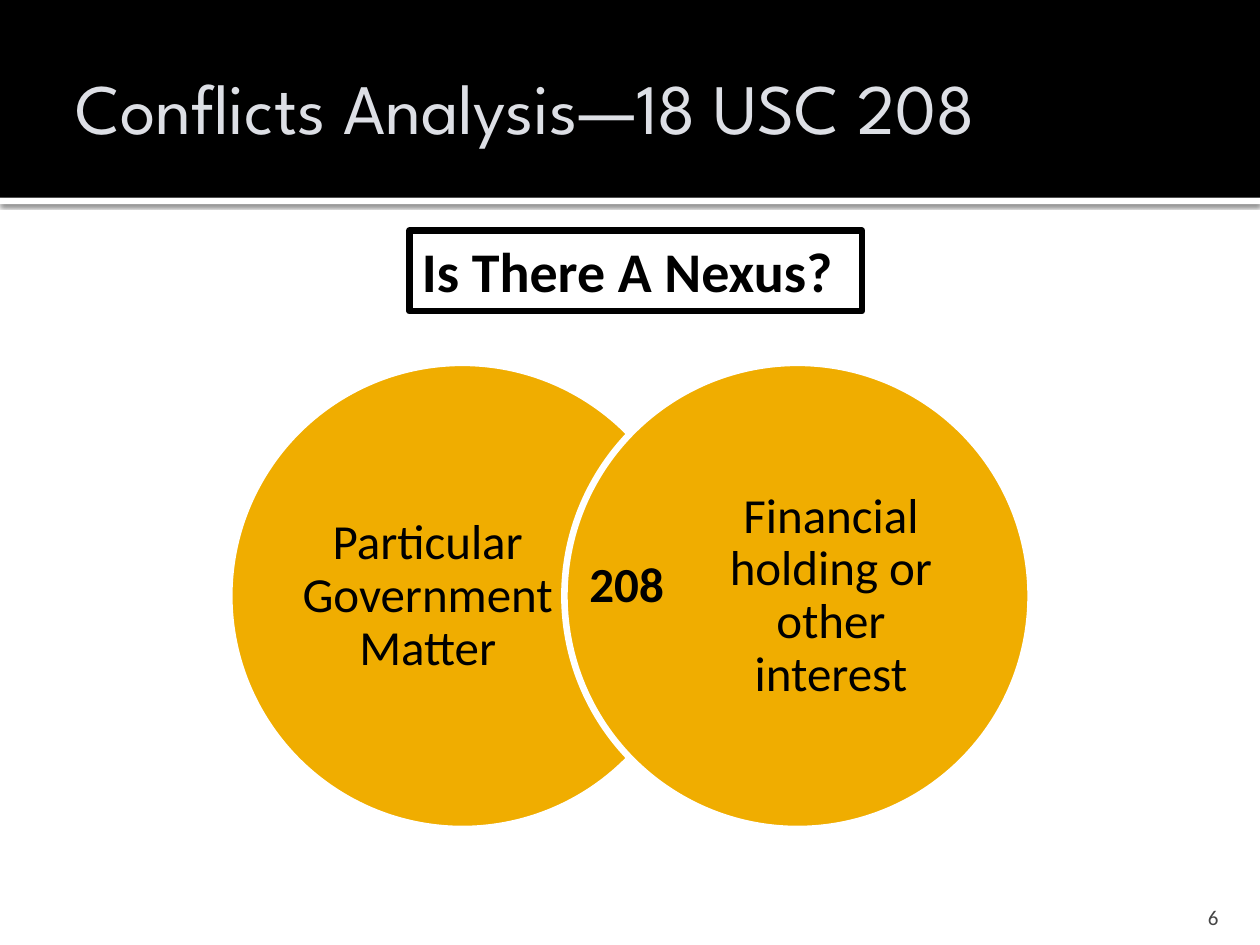
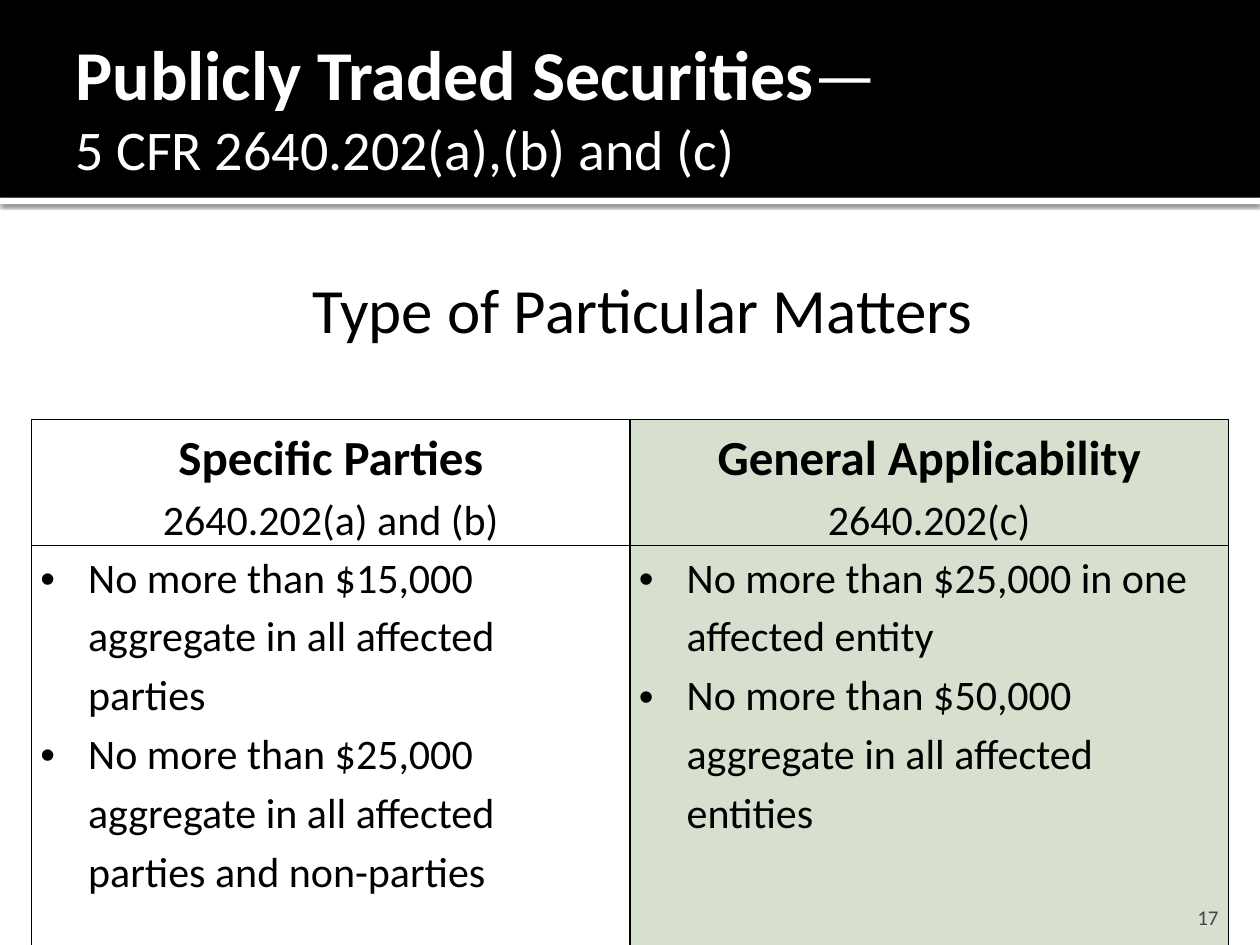
"""Build two slides on conflicts of interest and publicly traded securities."""
from dataclasses import dataclass

from lxml import etree
from pptx import Presentation
from pptx.dml.color import RGBColor
from pptx.enum.shapes import MSO_SHAPE
from pptx.enum.text import MSO_ANCHOR, PP_ALIGN
from pptx.oxml import parse_xml
from pptx.oxml.ns import nsdecls, qn
from pptx.util import Inches, Pt

RECT, OVAL = MSO_SHAPE.RECTANGLE, MSO_SHAPE.OVAL
LEFT, CENTER, RIGHT = PP_ALIGN.LEFT, PP_ALIGN.CENTER, PP_ALIGN.RIGHT
TOP, MIDDLE, BOTTOM = MSO_ANCHOR.TOP, MSO_ANCHOR.MIDDLE, MSO_ANCHOR.BOTTOM

HUES = {
    "black": "000000",
    "white": "FFFFFF",
    "title": "DDDFE5",
    "gold": "F0AD00",
    "sage": "D7DFCE",
    "grey": "454545",
}


@dataclass
class Run:
    text: str
    size: float
    bold: bool = False
    hue: str = "black"
    font: str = "Calibri"


@dataclass
class Para:
    runs: list[Run]
    align: PP_ALIGN = LEFT
    space: float = 1.0
    bullet: bool = False


@dataclass
class Box:
    left: float
    top: float
    width: float
    height: float
    anchor: MSO_ANCHOR = TOP
    inset: tuple = (0.1, 0.05, 0.1, 0.05)
    wrap: bool = True

    def place(self) -> list:
        return [Inches(n) for n in (self.left, self.top, self.width, self.height)]


@dataclass
class Circle:
    left: float
    label: float
    runs: list[Run]


@dataclass
class Column:
    head: str
    cite: str
    points: list[str]
    hue: str | None = None


TITLE = Box(0.5, 0.16, 9, 1.37, MIDDLE, (0.1, 0.05, 0.05, 0.05))
NUMBER = Box(8.97, 7.08, 0.8, 0.3, BOTTOM, (0.1, 0.05, 0.1, 0))
SIDE, RISE = 3.7, 2.88
CIRCLES = [
    Circle(1.82, 2.33, [Run("Particular Government", 28), Run(" ", 20), Run("Matter", 28)]),
    Circle(4.48, 5.53, [Run("Financial holding or other interest", 28)]),
]
COLUMNS = [
    Column("Specific Parties", "2640.202(a) and (b)", [
        "No more than $15,000 aggregate in all affected parties",
        "No more than $25,000 aggregate in all affected parties and non-parties",
    ]),
    Column("General Applicability", "2640.202(c)", [
        "No more than $25,000 in one affected entity",
        "No more than $50,000 aggregate in all affected entities",
    ], "sage"),
]


def tint(name: str) -> RGBColor:
    return RGBColor.from_string(HUES[name])


def write(frame, paras: list[Para]) -> None:
    for i, para in enumerate(paras):
        line = frame.add_paragraph() if i else frame.paragraphs[0]
        line.alignment, line.line_spacing = para.align, para.space
        if para.bullet:
            props = line._p.get_or_add_pPr()
            props.set("marL", str(Inches(0.38)))
            props.set("indent", str(-Inches(0.38)))
            etree.SubElement(props, qn("a:buFont"), typeface="Arial")
            etree.SubElement(props, qn("a:buChar"), char="•")
        for run in para.runs:
            part = line.add_run()
            part.text = run.text
            font = part.font
            font.name, font.size, font.bold = run.font, Pt(run.size), run.bold
            font.color.rgb = tint(run.hue)


def fit(frame, box: Box) -> None:
    frame.word_wrap, frame.vertical_anchor = box.wrap, box.anchor
    (frame.margin_left, frame.margin_top,
     frame.margin_right, frame.margin_bottom) = map(Inches, box.inset)


def add_text(slide, box: Box, paras: list[Para]) -> None:
    frame = slide.shapes.add_textbox(*box.place()).text_frame
    fit(frame, box)
    write(frame, paras)


def add_form(slide, kind: MSO_SHAPE, box: Box, fill: str, edge: str | None = None):
    form = slide.shapes.add_shape(kind, *box.place())
    form.shadow.inherit = False
    form.fill.solid()
    form.fill.fore_color.rgb = tint(fill)
    if edge:
        form.line.color.rgb = tint(edge)
        form.line.width = Pt(3.78)
    else:
        form.line.fill.background()
    return form


def add_base(deck, title: list[Para], number: str):
    slide = deck.slides.add_slide(deck.slide_layouts[6])
    strip = add_form(slide, RECT, Box(0, 1.57, 10, 0.05), "white")
    strip._element.spPr.find(qn("a:effectLst")).append(parse_xml(
        f'<a:outerShdw {nsdecls("a")} blurRad="{Pt(2.5)}" dist="{Pt(0.8)}" dir="5400000">'
        f'<a:srgbClr val="{HUES["black"]}"><a:alpha val="60000"/></a:srgbClr></a:outerShdw>'))
    add_form(slide, RECT, Box(0, 0, 10, 1.57), "black")
    add_text(slide, TITLE, title)
    return slide, Para([Run(number, 12, hue="grey")], RIGHT)


def add_edges(cell) -> None:
    props = cell._tc.get_or_add_tcPr()
    for side in "LRTB":
        props.append(parse_xml(
            f'<a:ln{side} {nsdecls("a")} w="{Pt(1)}"><a:solidFill>'
            f'<a:srgbClr val="{HUES["black"]}"/></a:solidFill></a:ln{side}>'))


def add_grid(slide) -> None:
    grid = slide.shapes.add_table(2, 2, *Box(0.25, 3.33, 9.5, 4.7).place()).table
    grid.first_row = grid.horz_banding = False
    grid.rows[0].height, grid.rows[1].height = Inches(1), Inches(3.7)
    for i, col in enumerate(COLUMNS):
        head = [Para([Run(col.head, 28, True)], CENTER, 1.15),
                Para([Run(col.cite, 24)], CENTER, 1.15)]
        body = [Para([Run(point, 24)], LEFT, 1.15, True) for point in col.points]
        for j, paras in enumerate((head, body)):
            cell = grid.cell(j, i)
            cell.margin_left = cell.margin_right = Inches(0.07)
            cell.margin_top = cell.margin_bottom = 0
            add_edges(cell)
            if col.hue:
                cell.fill.solid()
                cell.fill.fore_color.rgb = tint(col.hue)
            else:
                cell.fill.background()
            write(cell.text_frame, paras)


def add_nexus(deck) -> None:
    title = [Para([Run("Conflicts Analysis—18 USC 208", 40.5, hue="title", font="League Spartan")])]
    slide, number = add_base(deck, title, "6")
    for item in CIRCLES:
        add_form(slide, OVAL, Box(item.left, RISE, SIDE, SIDE), "gold", "white")
        label = Box(item.label, 3.32, 2.13, 2.83, MIDDLE, (0, 0, 0, 0))
        add_text(slide, label, [Para(item.runs, CENTER, 0.9)])
    add_text(slide, Box(4.58, 4.34, 0.81, 0.57, wrap=False), [Para([Run("208", 28, True)])])
    box = Box(3.25, 1.83, 3.59, 0.64)
    frame = add_form(slide, RECT, box, "white", "black").text_frame
    fit(frame, box)
    write(frame, [Para([Run("Is There A Nexus?", 32, True)])])
    add_text(slide, NUMBER, [number])


def add_stocks(deck) -> None:
    title = [
        Para([Run("Publicly Traded Securities", 40, True, "white"), Run("—", 40, hue="white")]),
        Para([Run("5 CFR 2640.202(a),(b) and (c)", 32, hue="white")]),
    ]
    slide, number = add_base(deck, title, "17")
    add_text(slide, Box(0.6, 2.05, 9, 0.8, inset=(0.1, 0.1, 0.1, 0.05)),
             [Para([Run("Type of Particular Matters", 36)], CENTER)])
    add_grid(slide)
    add_text(slide, NUMBER, [number])


def main() -> None:
    deck = Presentation()
    deck.slide_width, deck.slide_height = Inches(10), Inches(7.5)
    add_nexus(deck)
    add_stocks(deck)
    deck.save("out.pptx")


if __name__ == "__main__":
    main()
